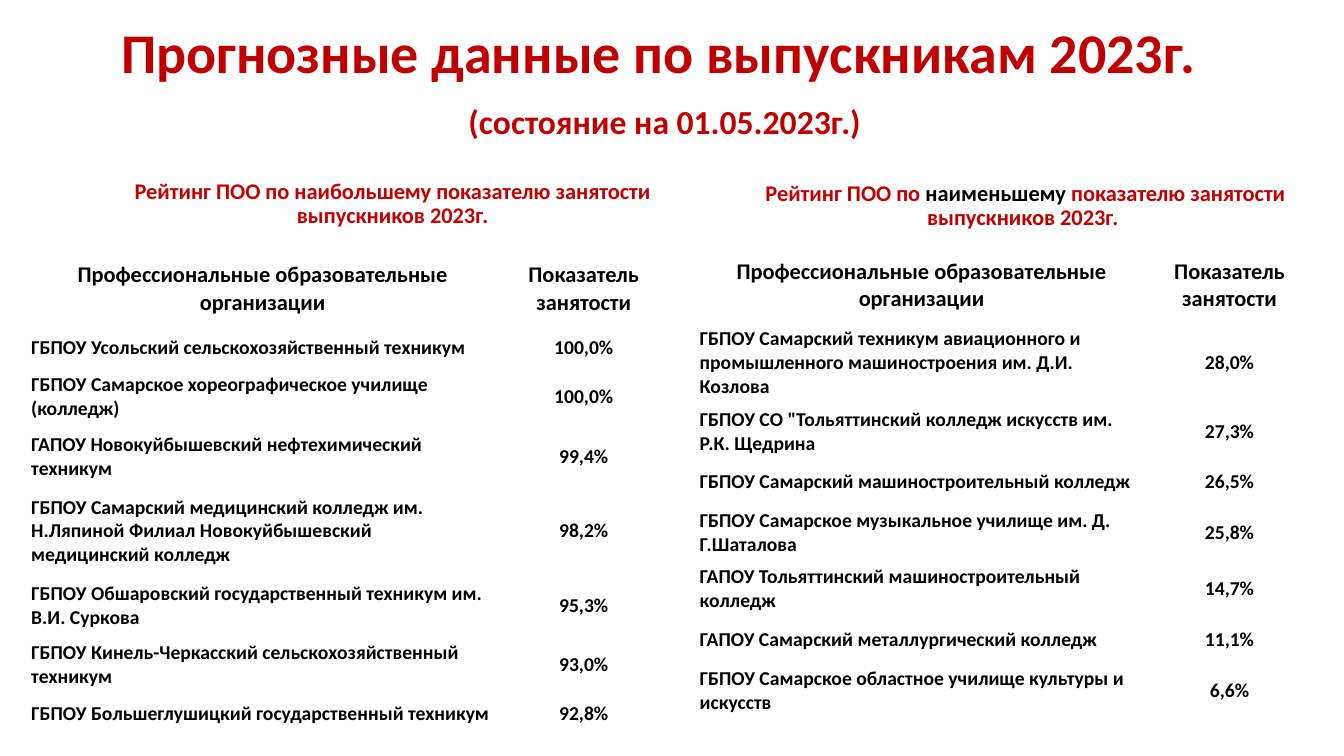
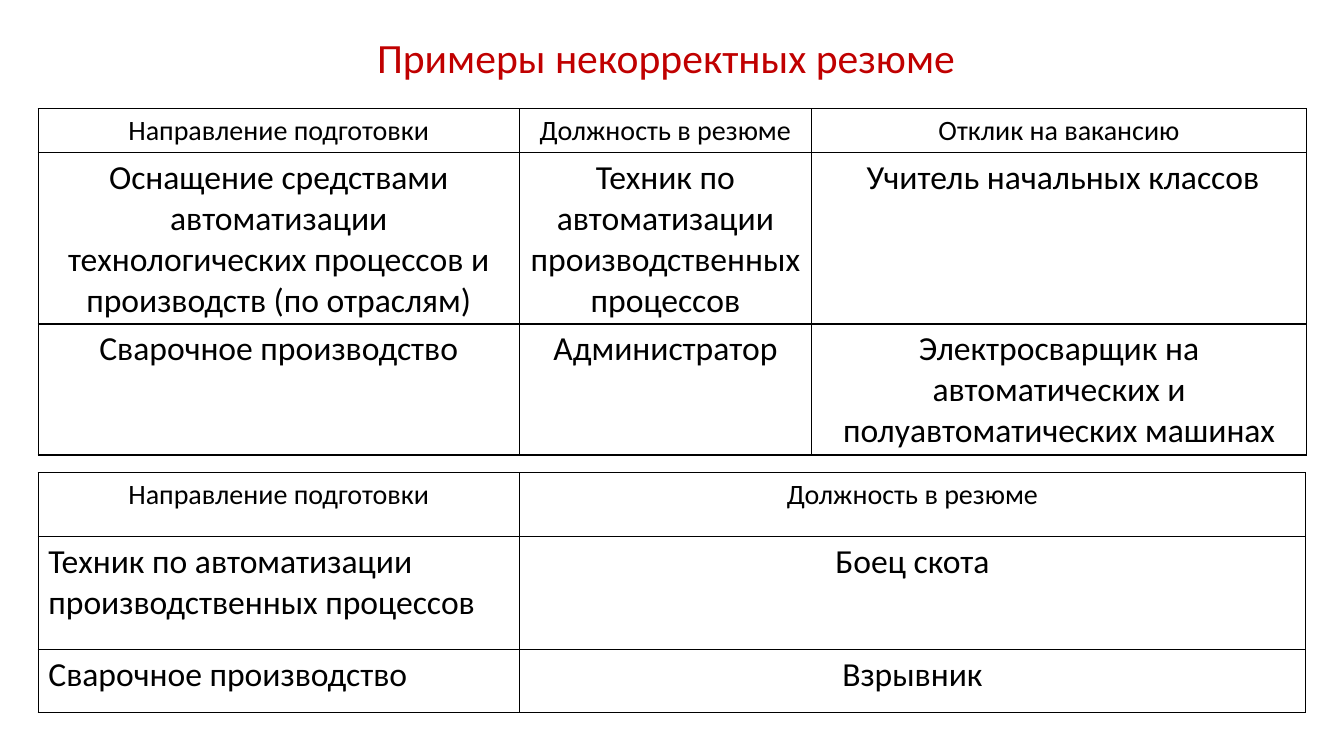
from dataclasses import dataclass

from lxml.etree import SubElement
from pptx import Presentation
from pptx.dml.color import RGBColor
from pptx.enum.text import MSO_ANCHOR as Anchor, PP_ALIGN as Align
from pptx.oxml.ns import qn
from pptx.util import Inches, Pt

FONT = "Calibri"
RED, BLACK, WHITE = "C00000", "000000", "FFFFFF"


@dataclass(frozen=True)
class Run:
    text: str
    size: float
    color: str = RED
    bold: bool = True


@dataclass(frozen=True)
class Label:
    box: tuple[float, float, float, float]
    paras: list[list[Run]]
    anchor: Anchor = Anchor.MIDDLE
    pitch: float = 0.9


@dataclass(frozen=True)
class Style:
    head: float
    body: float
    bold: bool
    edge: str
    rule: float
    anchor: Anchor
    inset: tuple[float, float, float, float]


@dataclass(frozen=True)
class Grid:
    left: float
    top: float
    cols: list[float]
    rows: list[float]
    cells: list[tuple[str, ...]]
    style: Style
    first: Align = Align.LEFT


PAD = (0.1, 0.05, 0.1, 0.05)
RANK = Style(16, 14, True, WHITE, 3, Anchor.MIDDLE, (0.01, 0.01, 0.01, 0))
PLAIN = Style(20, 24, False, BLACK, 1, Anchor.TOP, PAD)

RANK_HEAD = ("Профессиональные образовательные организации", "Показатель занятости")
FIELD, POST = "Направление подготовки", "Должность в резюме"
WELD = "Сварочное производство"

LABELS_1 = [
    Label((0.51, 0.21, 12.04, 1.29), [
        [Run("Прогнозные данные по выпускникам 2023г.", 40)],
        [Run(" ", 40), Run("(состояние на 01.05.2023г.)", 24)],
    ], Anchor.BOTTOM),
    Label((0.51, 1.81, 6.77, 0.44), [
        [Run("Рейтинг ПОО по наибольшему показателю занятости", 16)],
        [Run(" выпускников 2023г. ", 16)],
    ]),
    Label((7.22, 1.81, 5.9, 0.48), [[
        Run("Рейтинг ПОО по ", 16),
        Run("наименьшему", 16, BLACK),
        Run(" показателю занятости выпускников 2023г. ", 16),
    ]]),
]

GRIDS_1 = [
    Grid(0.3, 2.47, [4.61, 1.76],
         [0.79, 0.38, 0.59, 0.59, 0.89, 0.59, 0.59, 0.38], [
        RANK_HEAD,
        ("ГБПОУ Усольский сельскохозяйственный техникум", "100,0%"),
        ("ГБПОУ Самарское хореографическое училище (колледж)", "100,0%"),
        ("ГАПОУ Новокуйбышевский нефтехимический техникум", "99,4%"),
        ("ГБПОУ Самарский медицинский колледж им. Н.Ляпиной Филиал "
         "Новокуйбышевский медицинский колледж", "98,2%"),
        ("ГБПОУ Обшаровский государственный техникум им. В.И. Суркова", "95,3%"),
        ("ГБПОУ Кинель-Черкасский сельскохозяйственный техникум", "93,0%"),
        ("ГБПОУ Большеглушицкий государственный техникум", "92,8%"),
    ], RANK),
    Grid(6.93, 2.47, [4.42, 1.69],
         [0.72, 0.81, 0.55, 0.46, 0.55, 0.55, 0.46, 0.55], [
        RANK_HEAD,
        ("ГБПОУ Самарский техникум авиационного и промышленного "
         "машиностроения им. Д.И. Козлова", "28,0%"),
        ('ГБПОУ СО "Тольяттинский колледж искусств им. Р.К. Щедрина', "27,3%"),
        ("ГБПОУ Самарский машиностроительный колледж", "26,5%"),
        ("ГБПОУ Самарское музыкальное училище им. Д. Г.Шаталова", "25,8%"),
        ("ГАПОУ Тольяттинский машиностроительный колледж", "14,7%"),
        ("ГАПОУ Самарский металлургический колледж", "11,1%"),
        ("ГБПОУ Самарское областное училище культуры и искусств", "6,6%"),
    ], RANK),
]

LABELS_2 = [
    Label((0.86, 0.14, 11.5, 0.85),
          [[Run("Примеры некорректных резюме", 29.7, bold=False)]], pitch=1),
]

GRIDS_2 = [
    Grid(0.38, 1.08, [4.77, 2.9, 4.91], [0.43, 1.67, 1.3], [
        (FIELD, POST, "Отклик на вакансию"),
        ("Оснащение средствами автоматизации технологических процессов "
         "и производств (по отраслям)",
         "Техник по автоматизации производственных процессов",
         " Учитель начальных классов"),
        (WELD, "Администратор",
         "Электросварщик на автоматических и полуавтоматических машинах"),
    ], PLAIN, Align.CENTER),
    Grid(0.38, 4.69, [4.77, 7.8], [0.63, 1.12, 0.63], [
        (FIELD, POST),
        ("Техник по автоматизации производственных процессов", "Боец скота"),
        (WELD, "Взрывник"),
    ], PLAIN),
]


def paint(fill, color: str) -> None:
    fill.solid()
    fill.fore_color.rgb = RGBColor.from_string(color)


def add_run(para, run: Run) -> None:
    part = para.add_run()
    part.text = run.text
    font = part.font
    font.name, font.size, font.bold = FONT, Pt(run.size), run.bold
    font.color.rgb = RGBColor.from_string(run.color)


def add_label(slide, label: Label) -> None:
    frame = slide.shapes.add_textbox(*map(Inches, label.box)).text_frame
    frame.word_wrap = True
    frame.vertical_anchor = label.anchor
    for i, runs in enumerate(label.paras):
        para = frame.add_paragraph() if i else frame.paragraphs[0]
        para.alignment = Align.CENTER
        para.line_spacing = label.pitch
        for run in runs:
            add_run(para, run)


def set_edges(cell, color: str, base: float) -> None:
    """Border the cell at 1 pt, with its bottom edge at base points."""
    props = cell._tc.get_or_add_tcPr()
    for side, width in (("L", 1), ("R", 1), ("T", 1), ("B", base)):
        line = SubElement(props, qn(f"a:ln{side}"), w=str(Pt(width)))
        fill = SubElement(line, qn("a:solidFill"))
        SubElement(fill, qn("a:srgbClr"), val=color)


def add_grid(slide, grid: Grid) -> None:
    style = grid.style
    table = slide.shapes.add_table(
        len(grid.rows), len(grid.cols), Inches(grid.left), Inches(grid.top),
        Inches(sum(grid.cols)), Inches(sum(grid.rows))).table
    table.first_row = table.horz_banding = False
    for col, width in zip(table.columns, grid.cols):
        col.width = Inches(width)
    for r, texts in enumerate(grid.cells):
        table.rows[r].height = Inches(grid.rows[r])
        for c, text in enumerate(texts):
            cell = table.cell(r, c)
            set_edges(cell, style.edge, 1 if r else style.rule)
            paint(cell.fill, WHITE)
            cell.vertical_anchor = style.anchor
            (cell.margin_left, cell.margin_top, cell.margin_right,
             cell.margin_bottom) = map(Inches, style.inset if r else PAD)
            para = cell.text_frame.paragraphs[0]
            para.alignment = grid.first if r and not c else Align.CENTER
            size = style.body if r else style.head
            add_run(para, Run(text, size, BLACK, style.bold))


def main() -> None:
    deck = Presentation()
    deck.slide_width, deck.slide_height = Inches(13.33), Inches(7.5)
    for labels, grids in ((LABELS_1, GRIDS_1), (LABELS_2, GRIDS_2)):
        slide = deck.slides.add_slide(deck.slide_layouts[6])
        paint(slide.background.fill, WHITE)
        for grid in grids:
            add_grid(slide, grid)
        for label in labels:
            add_label(slide, label)
    deck.save("out.pptx")


if __name__ == "__main__":
    main()
